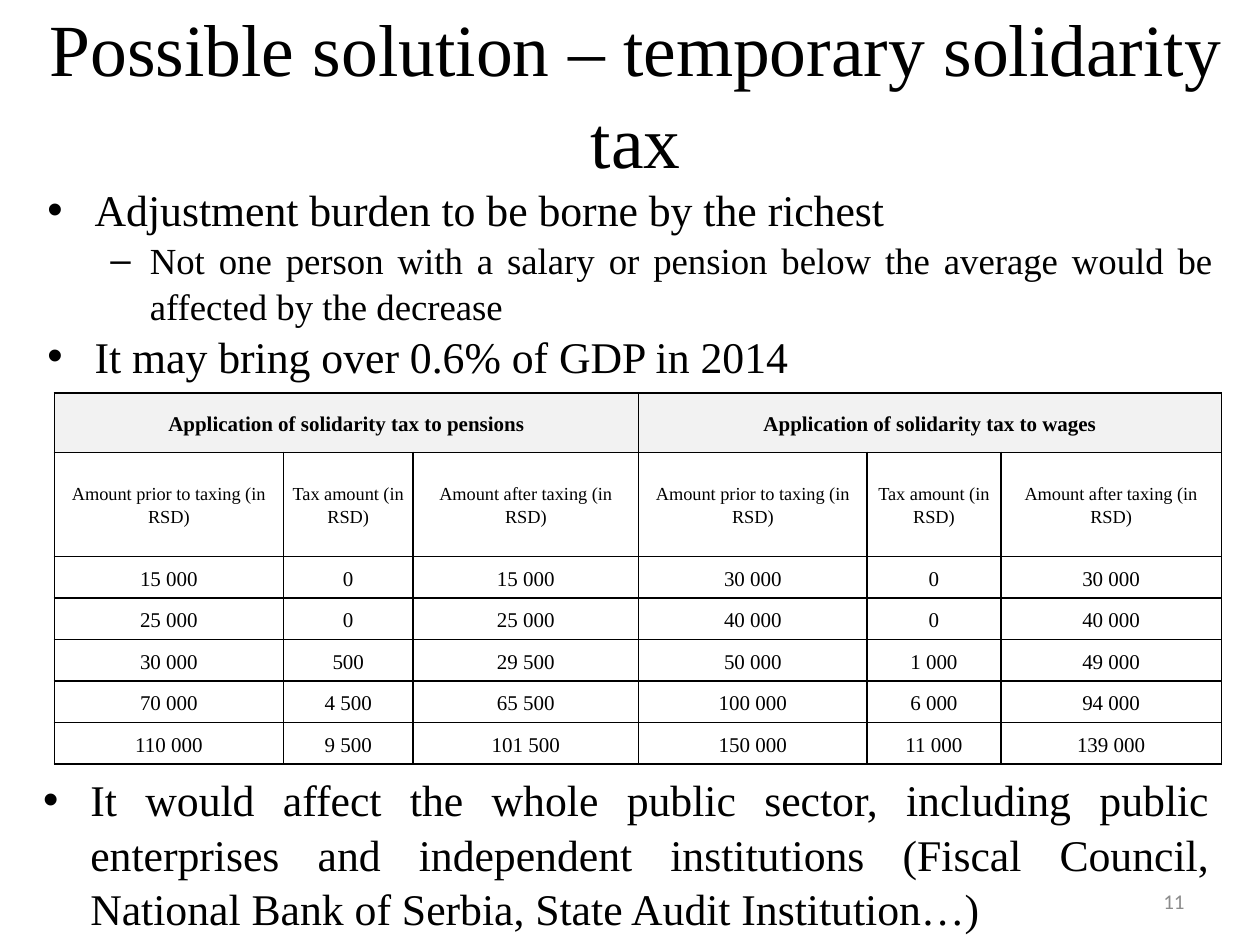
from lxml.etree import SubElement
from pptx import Presentation
from pptx.dml.color import RGBColor
from pptx.enum.text import MSO_ANCHOR as Anchor, PP_ALIGN as Align
from pptx.oxml.ns import qn
from pptx.util import Pt

COLORS = {"text": "000000", "number": "8C8C8C", "border": "000000",
          "header": "F2F2F2", "cell": "FFFFFF"}
SERIF = "Times New Roman"

# level: (bullet, font size, left margin, hanging indent)
LEVELS = {0: ("•", 25, 27, 27), 1: ("–", 21, 58.5, 22.5)}

COLUMN_WIDTHS = [131, 74, 129, 130.5, 76.5, 126]
ROW_HEIGHTS = [34, 59.5] + [23.75] * 5
GROUPS = ["Application of solidarity tax to pensions",
          "Application of solidarity tax to wages"]
MEASURES = ["Amount prior to taxing (in RSD)", "Tax amount (in RSD)",
            "Amount after taxing (in RSD)"]
AMOUNTS = [
    ["15 000", "0", "15 000", "30 000", "0", "30 000"],
    ["25 000", "0", "25 000", "40 000", "0", "40 000"],
    ["30 000", "500", "29 500", "50 000", "1 000", "49 000"],
    ["70 000", "4 500", "65 500", "100 000", "6 000", "94 000"],
    ["110 000", "9 500", "101 500", "150 000", "11 000", "139 000"],
]


def color(name):
    return RGBColor.from_string(COLORS[name])


def write(paragraph, text, size, align, font=SERIF, ink="text", bold=False, spacing=None):
    paragraph.alignment = align
    paragraph.line_spacing = spacing
    run = paragraph.add_run()
    run.text = text
    run.font.name = font
    run.font.size = Pt(size)
    run.font.bold = bold
    run.font.color.rgb = color(ink)


def add_frame(slide, box, anchor=Anchor.TOP):
    frame = slide.shapes.add_textbox(*map(Pt, box)).text_frame
    frame.word_wrap = True
    frame.vertical_anchor = anchor
    return frame


def add_title(slide, box, text):
    frame = add_frame(slide, box, Anchor.MIDDLE)
    write(frame.paragraphs[0], text, 42, Align.CENTER, spacing=1.04)


def add_bullets(slide, box, points):
    """Place (level, text) points as a bulleted list."""
    frame = add_frame(slide, box)
    for index, (level, text) in enumerate(points):
        paragraph = frame.add_paragraph() if index else frame.paragraphs[0]
        bullet, size, margin, hanging = LEVELS[level]
        paragraph.level = level
        write(paragraph, text, size, Align.JUSTIFY, spacing=1.04)
        properties = paragraph._p.get_or_add_pPr()
        properties.set("marL", str(Pt(margin)))
        properties.set("indent", str(-Pt(hanging)))
        SubElement(properties, qn("a:buFont"), typeface="Arial")
        SubElement(properties, qn("a:buChar"), char=bullet)


def add_page_number(slide, box, number):
    frame = add_frame(slide, box, Anchor.MIDDLE)
    write(frame.paragraphs[0], number, 12, Align.RIGHT, "Calibri", "number")


def add_borders(cell):
    properties = cell._tc.get_or_add_tcPr()
    for side in ("lnL", "lnR", "lnT", "lnB"):
        line = SubElement(properties, qn(f"a:{side}"), w=str(Pt(1)))
        fill = SubElement(line, qn("a:solidFill"))
        SubElement(fill, qn("a:srgbClr"), val=COLORS["border"])


def style_cell(cell, fill):
    add_borders(cell)
    cell.fill.solid()
    cell.fill.fore_color.rgb = color(fill)
    cell.vertical_anchor = Anchor.MIDDLE
    cell.margin_left = cell.margin_right = Pt(5)
    cell.margin_top = cell.margin_bottom = Pt(0)


def add_tax_table(slide, box):
    span = len(MEASURES)
    headings = [text for group in GROUPS for text in [group] + [""] * (span - 1)]
    rows = [headings, MEASURES * len(GROUPS)] + AMOUNTS
    table = slide.shapes.add_table(len(rows), len(headings), *map(Pt, box)).table
    for column, width in zip(table.columns, COLUMN_WIDTHS):
        column.width = Pt(width)
    for row, height in zip(table.rows, ROW_HEIGHTS):
        row.height = Pt(height)
    for start in range(0, len(headings), span):
        table.cell(0, start).merge(table.cell(0, start + span - 1))
    for r, texts in enumerate(rows):
        for c, text in enumerate(texts):
            cell = table.cell(r, c)
            style_cell(cell, "header" if r == 0 else "cell")
            if text:
                write(cell.text_frame.paragraphs[0], text, 10.5 if r == 1 else 12,
                      Align.CENTER, bold=r == 0, spacing=1.15)


def main():
    deck = Presentation()
    deck.slide_width, deck.slide_height = Pt(720), Pt(540)
    slide = deck.slides.add_slide(deck.slide_layouts[6])
    add_title(slide, (14.5, 9.5, 697.5, 85), "Possible solution – temporary solidarity tax")
    add_bullets(slide, (20, 100, 680.5, 108), [
        (0, "Adjustment burden to be borne by the richest"),
        (1, "Not one person with a salary or pension below the average would be "
            "affected by the decrease"),
        (0, "It may bring over 0.6% of GDP in 2014"),
    ])
    add_page_number(slide, (516, 500.5, 168, 29), "11")
    add_bullets(slide, (17.5, 437, 680.5, 96.5), [
        (0, "It would affect the whole public sector, including public enterprises and "
            "independent institutions (Fiscal Council, National Bank of Serbia, "
            "State Audit Institution…)"),
    ])
    add_tax_table(slide, (31, 224.5, sum(COLUMN_WIDTHS), sum(ROW_HEIGHTS)))
    deck.save("out.pptx")


if __name__ == "__main__":
    main()
